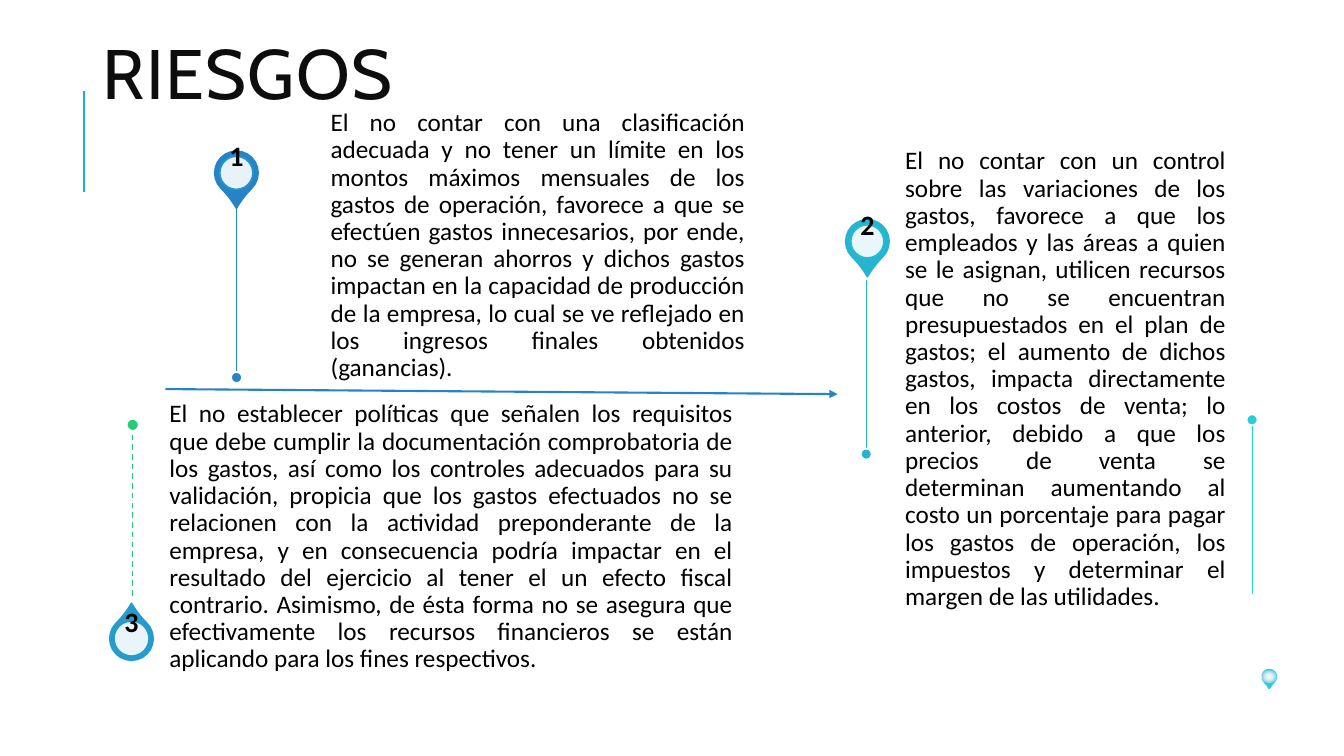
from dataclasses import dataclass
from typing import Optional

from lxml.etree import SubElement
from pptx import Presentation
from pptx.dml.color import RGBColor
from pptx.enum.dml import MSO_LINE_DASH_STYLE as Dash
from pptx.enum.shapes import MSO_CONNECTOR as Connector, MSO_SHAPE as Shape
from pptx.enum.text import MSO_ANCHOR as Anchor, PP_ALIGN as Align
from pptx.oxml.ns import qn
from pptx.util import Inches, Pt

COLUMNS, ROWS = 80, 45
CELL = Inches(1) / 6


@dataclass(frozen=True)
class Theme:
    title_font: str = "Cabin"
    body_font: str = "Calibri"
    title_size: float = 50
    number_size: float = 20
    body_size: float = 18
    title: str = "0D0D0D"
    ink: str = "000000"
    white: str = "FFFFFF"
    accent: str = "1CADE4"
    blue: str = "2683C6"
    blue_rim: str = "2695CA"
    sky: str = "269BCC"
    teal: str = "27B4D1"
    teal_rim: str = "27BAD3"
    aqua: str = "27CED7"
    green: str = "27CB77"
    mist: str = "B0D3D1"
    pale_rim: str = "99DAF3"


THEME = Theme()


@dataclass(frozen=True)
class Pin:
    """A map pin, placed by the centre of its round part."""
    number: str
    column: float
    row: float
    color: str
    rim: Optional[str]
    rotation: int = 135


@dataclass(frozen=True)
class Stem:
    """A line that starts in a dot; a negative length runs upwards."""
    column: float
    row: float
    length: float
    color: str
    width: float = 0.75
    dot_rim: float = 1.25
    dashed: bool = False


@dataclass(frozen=True)
class Risk:
    column: float
    row: float
    width: float
    height: float
    text: str
    bottom_inset: float = 0


STEM_LENGTH = 10.38
PIN_SIZE, DISC_SIZE, DOT_SIZE = 2.58, 1.98, 0.66
NUMBER_RISE = 0.9

PINS = [
    Pin("1", 14.07, 10.29, THEME.blue, THEME.blue_rim),
    Pin("2", 51.63, 14.37, THEME.teal, THEME.teal_rim),
    Pin("3", 7.83, 38.01, THEME.sky, None, rotation=315),
]
STEMS = [
    Stem(14.08, 22.47, -STEM_LENGTH, THEME.blue),
    Stem(51.56, 27.03, -STEM_LENGTH, THEME.teal),
    Stem(7.9, 25.29, STEM_LENGTH, THEME.green, 1, 0.5, dashed=True),
    Stem(74.53, 24.99, STEM_LENGTH, THEME.aqua),
]
RISKS = [
    Risk(19.68, 6.96, 25.38, 15.36,
         "El no contar con una clasificación adecuada y no tener un límite en los montos "
         "máximos mensuales de los gastos de operación, favorece a que se efectúen gastos "
         "innecesarios, por ende, no se generan ahorros y dichos gastos impactan en la "
         "capacidad de producción de la empresa, lo cual se ve reflejado en los ingresos "
         "finales obtenidos (ganancias)."),
    Risk(53.88, 7.32, 19.8, 30.54,
         "El no contar con un control sobre las variaciones de los gastos, favorece a que los "
         "empleados y las áreas a quien se le asignan, utilicen recursos que no se encuentran "
         "presupuestados en el plan de gastos; el aumento de dichos gastos, impacta "
         "directamente en los costos de venta; lo anterior, debido a que los precios de venta "
         "se determinan aumentando al costo un porcentaje para pagar los gastos de operación, "
         "los impuestos y determinar el margen de las utilidades."),
    Risk(10.08, 24.48, 34.26, 16.68,
         "El no establecer políticas que señalen los requisitos que debe cumplir la "
         "documentación comprobatoria de los gastos, así como los controles adecuados para su "
         "validación, propicia que los gastos efectuados no se relacionen con la actividad "
         "preponderante de la empresa, y en consecuencia podría impactar en el resultado del "
         "ejercicio al tener el un efecto fiscal contrario. Asimismo, de ésta forma no se "
         "asegura que efectivamente los recursos financieros se están aplicando para los fines "
         "respectivos.", bottom_inset=1.68),
]


def cells(count: float) -> int:
    return round(count * CELL)


def rgb(color: str) -> RGBColor:
    return RGBColor.from_string(color)


def add_line(page, start: tuple, end: tuple, color: str, width: float):
    line = page.shapes.add_connector(Connector.STRAIGHT, *map(cells, start + end))
    line.line.color.rgb = rgb(color)
    line.line.width = Pt(width)
    SubElement(line._element.spPr, qn("a:effectLst"))
    return line


def add_round(page, kind, center: tuple, width: float, height: float, fill: str,
              rim: Optional[str], rim_width: float = 1.25):
    column, row = center
    shape = page.shapes.add_shape(kind, cells(column - width / 2), cells(row - height / 2),
                                  cells(width), cells(height))
    shape.shadow.inherit = False
    shape.fill.solid()
    shape.fill.fore_color.rgb = rgb(fill)
    if rim:
        shape.line.color.rgb = rgb(rim)
        shape.line.width = Pt(rim_width)
    else:
        shape.line.fill.background()
    return shape


def add_drop(page, center: tuple, size: float, color: str, rotation: int) -> None:
    drop = add_round(page, Shape.TEAR, center, size, size, color, color)
    drop.adjustments[0] = 1.15
    drop.rotation = rotation


def add_text(page, area: tuple, text: str, font: str, size: float, color: str,
             align, anchor, spacing: float, insets: tuple, bold: bool = False):
    box = page.shapes.add_textbox(*map(cells, area))
    frame = box.text_frame
    frame.word_wrap = True
    frame.vertical_anchor = anchor
    (frame.margin_left, frame.margin_top,
     frame.margin_right, frame.margin_bottom) = map(cells, insets)
    para = frame.paragraphs[0]
    para.text = text
    para.alignment = align
    para.line_spacing = spacing
    para.font.name, para.font.size, para.font.bold = font, Pt(size), bold
    para.font.color.rgb = rgb(color)
    return para


def add_pin(page, pin: Pin) -> None:
    center = (pin.column, pin.row)
    add_drop(page, center, PIN_SIZE, pin.color, pin.rotation)
    disc = add_round(page, Shape.OVAL, center, DISC_SIZE, DISC_SIZE, THEME.white, pin.rim)
    color = disc._element.spPr.find(qn("a:solidFill"))[0]
    SubElement(color, qn("a:alpha"), val="90000")
    area = (pin.column - 1, pin.row - NUMBER_RISE - 1.25, 2, 2.5)
    add_text(page, area, pin.number, THEME.body_font, THEME.number_size, THEME.ink,
             Align.CENTER, Anchor.MIDDLE, 0.9, (0, 0, 0, 0), bold=True)


def add_stem(page, stem: Stem) -> None:
    start = (stem.column, stem.row)
    line = add_line(page, start, (stem.column, stem.row + stem.length), stem.color, stem.width)
    if stem.dashed:
        line.line.dash_style = Dash.DASH
    add_round(page, Shape.OVAL, start, DOT_SIZE, DOT_SIZE, stem.color, THEME.white, stem.dot_rim)


def add_corner_pin(page) -> None:
    center = (75.55, 40.28)
    add_drop(page, center, 0.84, THEME.aqua, 135)
    disc = add_round(page, Shape.OVAL, center, 0.78, 0.66, THEME.white, THEME.pale_rim)
    disc.fill.gradient()
    for stop, color in zip(disc.fill.gradient_stops, (THEME.white, THEME.mist)):
        stop.color.rgb = rgb(color)
    gradient = disc._element.spPr.find(qn("a:gradFill"))
    gradient.remove(gradient.find(qn("a:lin")))
    circle = SubElement(gradient, qn("a:path"), path="circle")
    SubElement(circle, qn("a:fillToRect"), l="50000", t="50000", r="50000", b="50000")


def main() -> None:
    deck = Presentation()
    deck.slide_width, deck.slide_height = cells(COLUMNS), cells(ROWS)
    page = deck.slides.add_slide(deck.slide_layouts[6])

    add_line(page, (5, 11.4), (5, 5.4), THEME.accent, 1.5)
    title = add_text(page, (5.52, 1.68, 30.18, 5.34), "RIESGOS", THEME.title_font,
                     THEME.title_size, THEME.title, Align.LEFT, Anchor.BOTTOM, 0.8,
                     (0.6, 0.3, 0.6, 0.3))
    title.runs[0].font._element.set("spc", "100")

    arrow = add_line(page, (9.84, 23.16), (49.86, 23.46), THEME.blue, 1.5)
    SubElement(arrow.line._get_or_add_ln(), qn("a:tailEnd"), type="triangle")
    for risk in RISKS:
        add_text(page, (risk.column, risk.row, risk.width, risk.height), risk.text,
                 THEME.body_font, THEME.body_size, THEME.ink, Align.JUSTIFY, Anchor.MIDDLE,
                 0.9, (0, 0, 0.72, risk.bottom_inset))
    for stem in STEMS:
        add_stem(page, stem)
    for pin in PINS:
        add_pin(page, pin)
    add_corner_pin(page)
    deck.save("out.pptx")


if __name__ == "__main__":
    main()
